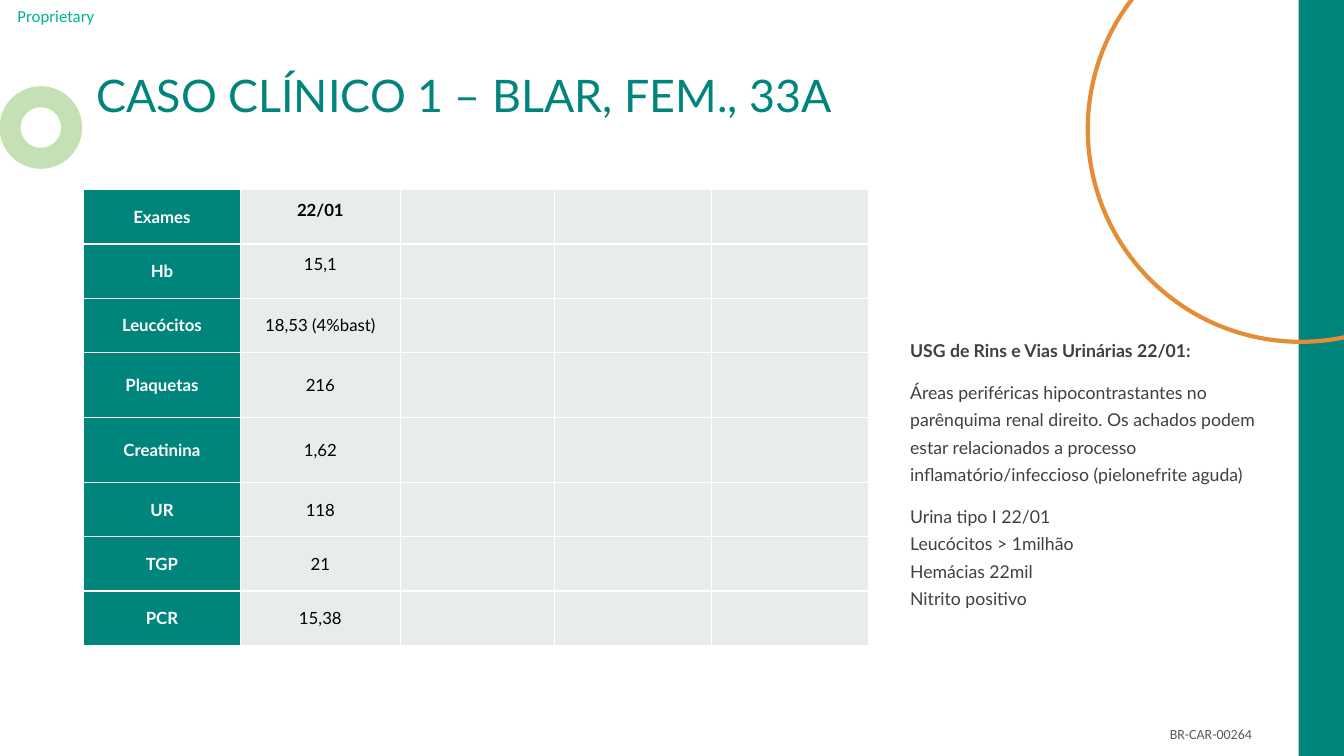
from lxml import etree
from pptx import Presentation
from pptx import util as u
from pptx.dml.color import RGBColor
from pptx.enum import shapes, text
from pptx.oxml.ns import qn

TEAL, ORANGE, GREEN, PALE = "00857C", "E48C36", "C5E0B4", "E7EDEC"
WHITE, BLACK, BODY, GREY, MINT = "FFFFFF", "000000", "404040", "5B5B5B", "00B294"
MIDDLE = text.MSO_ANCHOR.MIDDLE
TOP = text.MSO_ANCHOR.TOP


def rgb(value):
    return RGBColor.from_string(value)


class ClinicalSlide:
    font = "Lato"

    def __init__(self, prs):
        self.slide = prs.slides.add_slide(prs.slide_layouts[6])

    def style(self, paragraph, size, color, bold=False, font=None):
        for run in paragraph.runs:
            run.font.name = font or self.font
            run.font.size = u.Pt(size)
            run.font.bold = bold
            run.font.color.rgb = rgb(color)

    def shape(self, kind, box, fill=None, line=None, width=0):
        item = self.slide.shapes.add_shape(kind, *map(u.Pt, box))
        item.shadow.inherit = False
        if fill:
            item.fill.solid()
            item.fill.fore_color.rgb = rgb(fill)
        else:
            item.fill.background()
        if line:
            item.line.color.rgb = rgb(line)
            item.line.width = u.Pt(width)
        else:
            item.line.fill.background()

    def text(self, box, paragraphs, size, color, bold_first=False, font=None,
             anchor=TOP, spacing=1.0, before=0, margins=(7.2, 3.6)):
        frame = self.slide.shapes.add_textbox(*map(u.Pt, box)).text_frame
        frame.word_wrap = True
        frame.vertical_anchor = anchor
        frame.margin_left = frame.margin_right = u.Pt(margins[0])
        frame.margin_top = frame.margin_bottom = u.Pt(margins[1])
        for i, words in enumerate(paragraphs):
            paragraph = frame.add_paragraph() if i else frame.paragraphs[0]
            paragraph.text = words
            paragraph.line_spacing = spacing
            if i:
                paragraph.space_before = u.Pt(before)
            self.style(paragraph, size, color, bold_first and i == 0, font)

    def borders(self, cell, color, width):
        props = cell._tc.get_or_add_tcPr()
        for position, side in enumerate(("lnL", "lnR", "lnT", "lnB")):
            line = etree.Element(qn(f"a:{side}"), w=str(u.Pt(width)))
            fill = etree.SubElement(line, qn("a:solidFill"))
            etree.SubElement(fill, qn("a:srgbClr"), val=color)
            props.insert(position, line)

    def cell(self, cell, words, fill, color, bold, anchor, margins):
        cell.fill.solid()
        cell.fill.fore_color.rgb = rgb(fill)
        self.borders(cell, WHITE, 1)
        cell.vertical_anchor = anchor
        cell.margin_left = cell.margin_right = u.Pt(margins[0])
        cell.margin_top = cell.margin_bottom = u.Pt(margins[1])
        if words:
            paragraph = cell.text_frame.paragraphs[0]
            paragraph.text = words
            paragraph.alignment = text.PP_ALIGN.CENTER
            self.style(paragraph, 12, color, bold)

    def exam_table(self, left, top, widths, heights, exams):
        table = self.slide.shapes.add_table(
            len(heights), len(widths), u.Pt(left), u.Pt(top),
            u.Pt(sum(widths)), u.Pt(sum(heights))).table
        for column, width in zip(table.columns, widths):
            column.width = u.Pt(width)
        for row, height in zip(table.rows, heights):
            row.height = u.Pt(height)
        for r, (exam, result) in enumerate(exams):
            self.cell(table.cell(r, 0), exam, TEAL, WHITE, True, MIDDLE, (7.2, 7.2))
            # The date and the first result sit at the top of their cells
            anchor, margins = (TOP, (7.2, 7.2)) if r < 2 else (MIDDLE, (2.2, 1.4))
            for c in range(1, len(widths)):
                self.cell(table.cell(r, c), result if c == 1 else "", PALE, BLACK,
                          r == 0, anchor, margins)


def main():
    prs = Presentation()
    prs.slide_width, prs.slide_height = u.Pt(960), u.Pt(540)
    page = ClinicalSlide(prs)
    oval = shapes.MSO_SHAPE.OVAL

    # Frame: classification, side band, ring, document code, large circle
    page.text((12.5, 0, 80, 23), ["Proprietary"], 12, MINT, font="Calibri",
              anchor=MIDDLE, margins=(0, 0))
    page.shape(shapes.MSO_SHAPE.RECTANGLE, (927.6, 0, 56, 540), fill=TEAL)
    page.shape(oval, (7.2, 69.1, 44, 44), line=GREEN, width=15)
    page.text((828.5, 514.4, 86.4, 19.4), ["BR-CAR-00264"], 10, GREY, font="Calibri")
    page.shape(oval, (777, -59.8, 304, 304), line=ORANGE, width=3)

    # Title
    page.text((61.9, 48.2, 810.7, 43.9), ["CASO CLÍNICO 1 – BLAR, FEM., 33A"],
              32, TEAL, anchor=MIDDLE, spacing=0.9)

    # Imaging and urine findings
    page.text((643, 234.7, 267.8, 235.4), [
        "USG de Rins e Vias Urinárias 22/01:",
        "Áreas periféricas hipocontrastantes no parênquima renal direito. "
        "Os achados podem estar relacionados a processo "
        "inflamatório/infeccioso (pielonefrite aguda)",
        "Urina tipo I 22/01\vLeucócitos > 1milhão\vHemácias 22mil\vNitrito positivo",
    ], 12.6, BODY, bold_first=True, spacing=1.3, before=10)

    # Laboratory results
    exams = [("Exames", "22/01"), ("Hb", "15,1"), ("Leucócitos", "18,53 (4%bast)"),
             ("Plaquetas", "216"), ("Creatinina", "1,62"), ("UR", "118"),
             ("TGP", "21"), ("PCR", "15,38")]
    heights = [46.4 if exam in ("Plaquetas", "Creatinina") else 38.8
               for exam, _ in exams]
    page.exam_table(59.7, 135.5, [112, 114.3, 110, 112.5, 112.2], heights, exams)

    prs.save("out.pptx")


if __name__ == "__main__":
    main()
